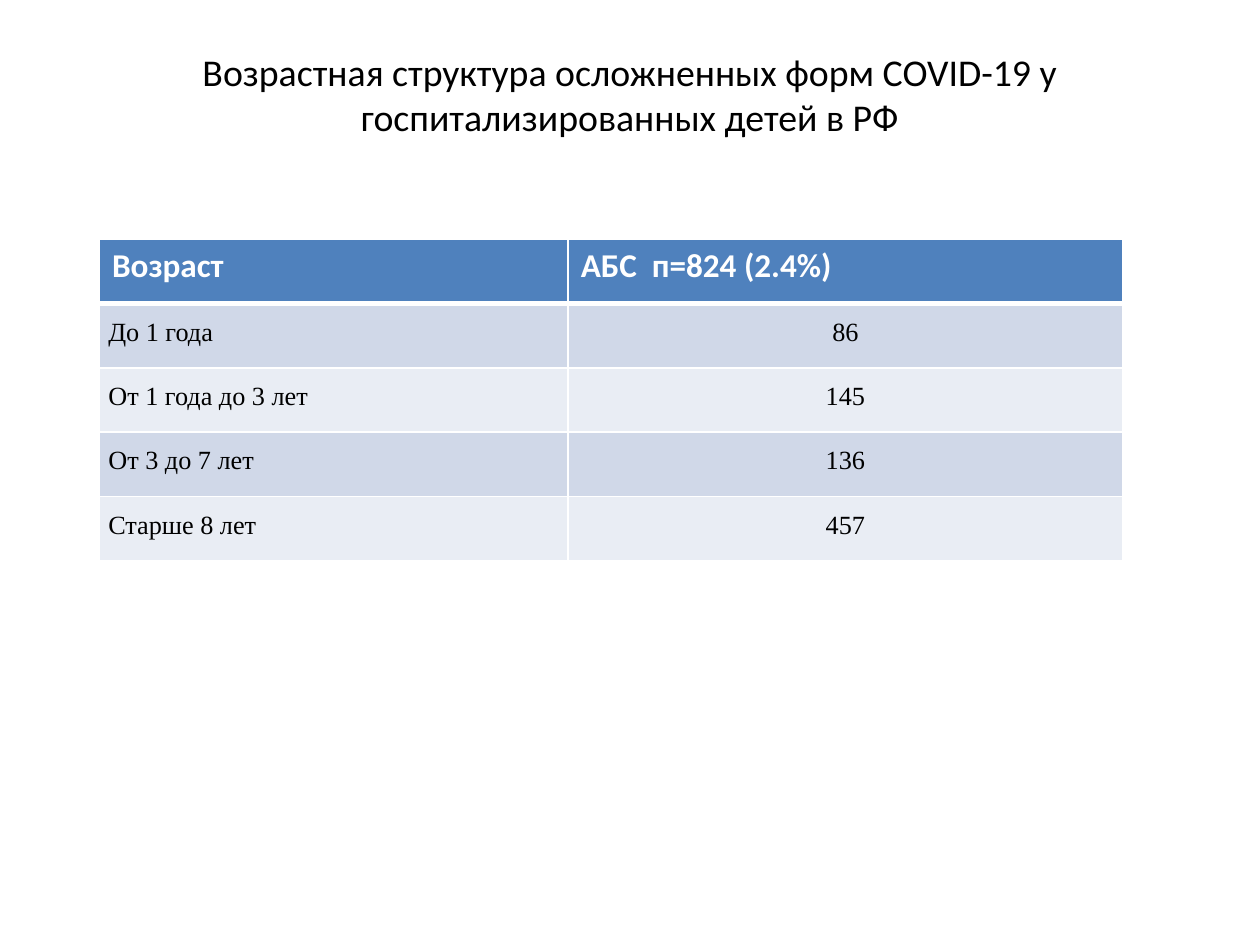
from lxml.etree import SubElement as Sub
from pptx import Presentation
from pptx.dml.color import RGBColor
from pptx.enum.text import MSO_ANCHOR as Anchor, PP_ALIGN as Align
from pptx.oxml.ns import qn
from pptx.util import Inches, Pt

BLACK = RGBColor(0, 0, 0)
WHITE = RGBColor(255, 255, 255)
BLUE = RGBColor(0x4F, 0x81, 0xBD)
BANDS = RGBColor(0xE9, 0xED, 0xF4), RGBColor(0xD0, 0xD8, 0xE8)

TITLE = "Возрастная структура осложненных форм COVID-19 у госпитализированных детей в РФ"
ROWS = [
    ("Возраст", "АБС  п=824 (2.4%)"),
    ("До 1 года", "86"),
    ("От 1 года до 3 лет", "145"),
    ("От 3 до 7 лет", "136"),
    ("Старше 8 лет", "457"),
]


def write(frame, text, size=15, font="Calibri", color=BLACK, bold=False,
          align=Align.LEFT, lead=None):
    par = frame.paragraphs[0]
    par.alignment = align
    par.line_spacing = lead
    run = par.add_run()
    run.text = text
    run.font.size = Pt(size)
    run.font.name = font
    run.font.bold = bold
    run.font.color.rgb = color


class Deck:
    head = {"size": 19, "color": WHITE, "bold": True}
    body = {"size": 15, "font": "Times New Roman", "lead": 1.5}
    aligns = Align.JUSTIFY, Align.CENTER

    def __init__(self):
        self.show = Presentation()
        self.show.slide_width = Inches(10)
        self.show.slide_height = Inches(7.5)
        self.slide = self.show.slides.add_slide(self.show.slide_layouts[6])

    def title(self, text, left, top, width, height):
        box = self.slide.shapes.add_textbox(
            Inches(left), Inches(top), Inches(width), Inches(height))
        frame = box.text_frame
        frame.word_wrap = True
        frame.vertical_anchor = Anchor.MIDDLE
        frame.margin_bottom = Inches(0.41)
        write(frame, text, size=21.6, align=Align.CENTER)

    def edges(self, cell, **widths):
        props = cell._tc.get_or_add_tcPr()
        for side in "LRTB":
            line = Sub(props, qn(f"a:ln{side}"), w=str(Pt(widths.get(side, 1))))
            fill = Sub(line, qn("a:solidFill"))
            Sub(fill, qn("a:srgbClr"), val=str(WHITE))

    def table(self, rows, left, top, cols, tall):
        table = self.slide.shapes.add_table(
            len(rows), len(cols), Inches(left), Inches(top),
            Inches(sum(cols)), Inches(tall * len(rows))).table
        for col, width in zip(table.columns, cols):
            col.width = Inches(width)
        for i, row in enumerate(rows):
            for j, text in enumerate(row):
                cell = table.cell(i, j)
                self.edges(cell, T=3 if i == 1 else 1, B=3 if i == 0 else 1)
                cell.fill.solid()
                cell.fill.fore_color.rgb = BANDS[i % 2] if i else BLUE
                if i:
                    cell.margin_left = cell.margin_right = Inches(0.07)
                    cell.margin_top = cell.margin_bottom = 0
                    write(cell.text_frame, text, align=self.aligns[j], **self.body)
                else:
                    write(cell.text_frame, text, **self.head)

    def save(self):
        self.show.save("out.pptx")


def main():
    deck = Deck()
    deck.title(TITLE, 0.5, 0.3, 9, 1.25)
    deck.table(ROWS, 0.79, 1.9, (3.72, 4.4), 0.51)
    deck.save()


if __name__ == "__main__":
    main()
